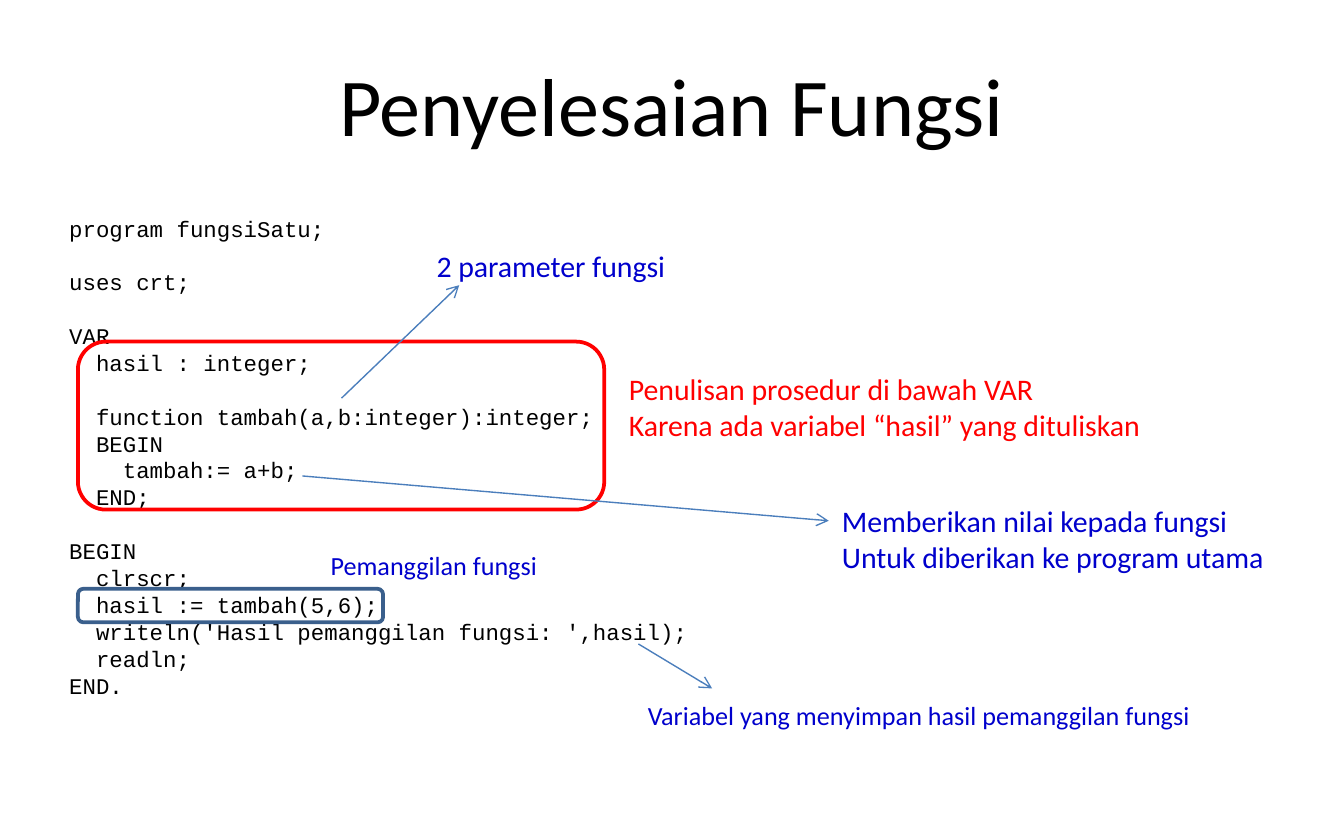
from pptx import Presentation
from pptx.dml.color import RGBColor
from pptx.enum import shapes as s, text as t
from pptx.oxml.ns import qn
from pptx.util import Pt
from lxml import etree

RED, BLUE = "FF0000", "0000CC"
PITCH = 14.4


def paint(target, color):
    target.rgb = RGBColor.from_string(color)


def write(box, lines, size, color="000000", font="Calibri"):
    """Add a text box; an empty line becomes space before the next one."""
    frame = slide.shapes.add_textbox(*map(Pt, box)).text_frame
    frame.word_wrap = True
    para, gap = frame.paragraphs[0], 0
    for i, line in enumerate(lines):
        if not line:
            gap += PITCH
            continue
        if i:
            para = frame.add_paragraph()
        if gap:
            para.space_before = Pt(gap)
            gap = 0
        run = para.add_run()
        run.text = line
        run.font.size, run.font.name = Pt(size), font
        paint(run.font.color, color)
    return frame


deck = Presentation()
deck.slide_width, deck.slide_height = Pt(720), Pt(450)
slide = deck.slides.add_slide(deck.slide_layouts[6])

title = write((36, 18, 648, 75), ["Penyelesaian Fungsi"], 44)
title.vertical_anchor = t.MSO_ANCHOR.MIDDLE
title.paragraphs[0].alignment = t.PP_ALIGN.CENTER

source = """program fungsiSatu;

uses crt;

VAR
  hasil : integer;

  function tambah(a,b:integer):integer;
  BEGIN
    tambah:= a+b;
  END;

BEGIN
  clrscr;
  hasil := tambah(5,6);
  writeln('Hasil pemanggilan fungsi: ',hasil);
  readln;
END."""
code = write((30, 111.5, 352, 269), source.split("\n"), 12, font="Courier New")
for para in code.paragraphs:
    para.line_spacing = Pt(PITCH)

frames = [
    ((41.75, 183, 282, 90), RED),
    ((41.75, 315.4, 163.5, 18), "3A5F8C"),
]
for box, color in frames:
    frame = slide.shapes.add_shape(s.MSO_SHAPE.ROUNDED_RECTANGLE, *map(Pt, box))
    frame.shadow.inherit = False
    frame.fill.background()
    frame.line.width = Pt(2)
    paint(frame.line.color, color)

arrows = [
    (183, 213.3, 246, 152.8),
    (342, 345, 381.5, 368.8),
    (162, 255, 444, 279),
]
for ends in arrows:
    arrow = slide.shapes.add_connector(s.MSO_CONNECTOR.STRAIGHT, *map(Pt, ends))
    arrow.line.width = Pt(0.75)
    paint(arrow.line.color, "4B7EBC")
    etree.SubElement(arrow.line._get_or_add_ln(), qn("a:tailEnd"), type="arrow")
    etree.SubElement(arrow._element.spPr, qn("a:effectLst"))

notes = [
    ((329.8, 195, 291, 46), 16, RED,
     ["Penulisan prosedur di bawah VAR",
      "Karena ada variabel “hasil” yang dituliskan"]),
    ((226.8, 129, 138.5, 26.6), 16, BLUE, ["2 parameter fungsi"]),
    ((170, 291, 126, 24.2), 14, BLUE, ["Pemanggilan fungsi"]),
    ((340, 371, 308, 24.2), 14, BLUE,
     ["Variabel yang menyimpan hasil pemanggilan fungsi"]),
    ((444, 265.7, 243.5, 46), 16, BLUE,
     ["Memberikan nilai kepada fungsi",
      "Untuk diberikan ke program utama"]),
]
for box, size, color, lines in notes:
    write(box, lines, size, color)

deck.save("out.pptx")
